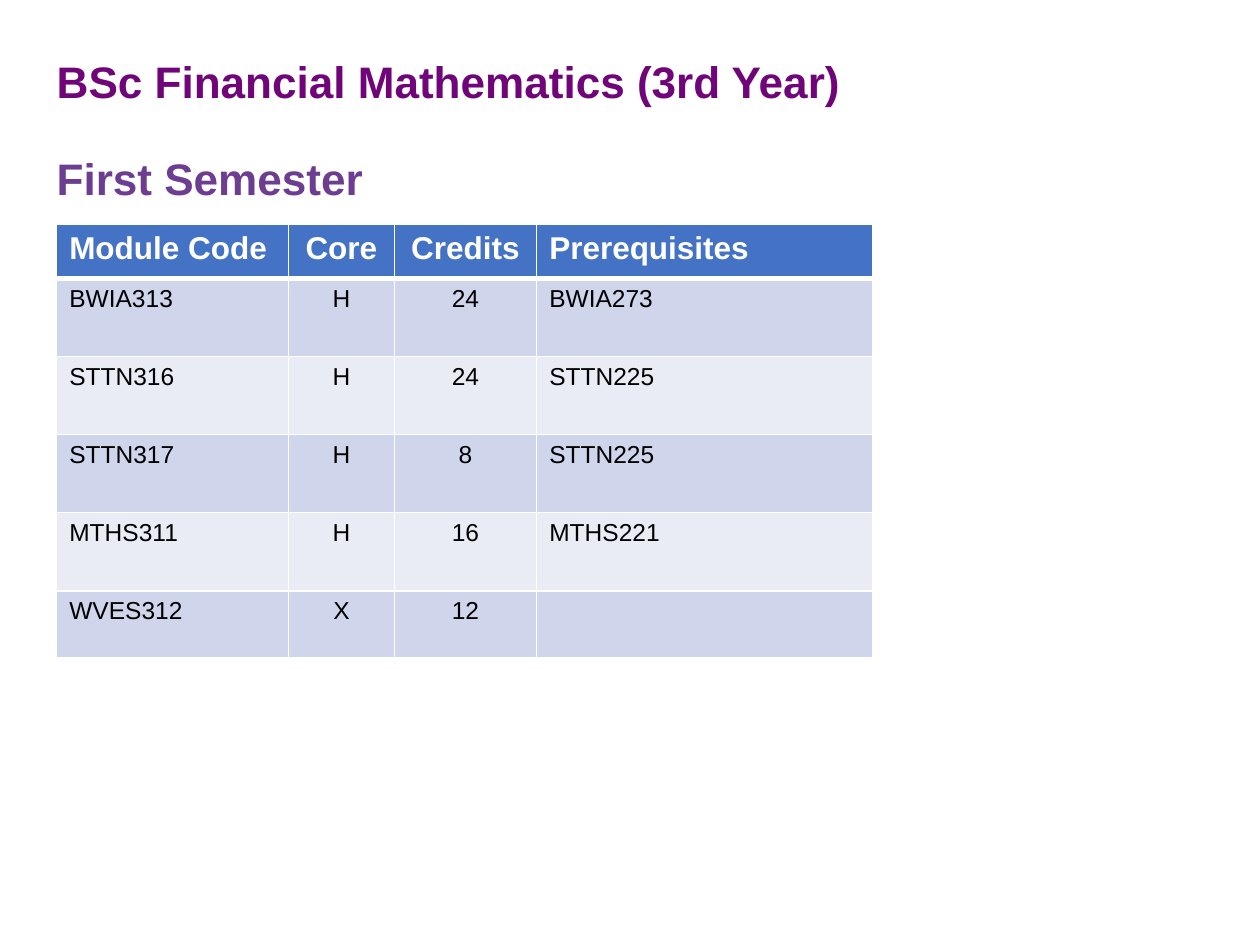
from pptx import Presentation
from pptx.dml.color import RGBColor
from pptx.enum.text import PP_ALIGN as Align
from pptx.oxml import parse_xml
from pptx.oxml.ns import nsdecls
from pptx.util import Inches, Pt

PURPLE = RGBColor(0x6F, 0x05, 0x79)
VIOLET = RGBColor(0x6C, 0x3D, 0x91)
BLUE = RGBColor(0x44, 0x72, 0xC4)
BAND_DARK = RGBColor(0xCF, 0xD5, 0xEA)
BAND_LIGHT = RGBColor(0xE9, 0xEB, 0xF5)
WHITE = RGBColor(0xFF, 0xFF, 0xFF)
BLACK = RGBColor(0x00, 0x00, 0x00)

HEADINGS = [("BSc Financial Mathematics (3rd Year)", PURPLE), ("First Semester", VIOLET)]
MODULES = [
    ("Module Code", "Core", "Credits", "Prerequisites"),
    ("BWIA313", "H", "24", "BWIA273"),
    ("STTN316", "H", "24", "STTN225"),
    ("STTN317", "H", "8", "STTN225"),
    ("MTHS311", "H", "16", "MTHS221"),
    ("WVES312", "X", "12", ""),
]
COLUMN_WIDTHS = [1.84, 0.84, 1.13, 2.67]
ROW_HEIGHTS = [0.43] + [0.62] * 4 + [0.53]
CENTERED_COLUMNS = (1, 2)


class SlideBuilder:
    font_name = "Arial"
    heading_size = 25.2
    header_size = 18
    body_size = 14

    def __init__(self, slide):
        self.slide = slide

    def style(self, paragraph, size, color, bold):
        font = paragraph.font
        font.name = self.font_name
        font.size = Pt(size)
        font.bold = bold
        font.color.rgb = color

    def headings(self, lines, left, top, width, height):
        box = self.slide.shapes.add_textbox(
            Inches(left), Inches(top), Inches(width), Inches(height))
        frame = box.text_frame
        frame.word_wrap = True
        frame.margin_left = frame.margin_top = Inches(0.08)
        for index, (text, color) in enumerate(lines):
            paragraph = frame.add_paragraph() if index else frame.paragraphs[0]
            paragraph.text = text
            paragraph.line_spacing = 0.9
            if index:
                paragraph.space_before = Pt(28)
            self.style(paragraph, self.heading_size, color, True)

    def borders(self, cell, top, bottom):
        properties = cell._tc.get_or_add_tcPr()
        widths = {"lnL": 1, "lnR": 1, "lnT": top, "lnB": bottom}
        for position, (side, width) in enumerate(widths.items()):
            properties.insert(position, parse_xml(
                f'<a:{side} {nsdecls("a")} w="{Pt(width)}"><a:solidFill>'
                f'<a:srgbClr val="{WHITE}"/></a:solidFill></a:{side}>'))

    def table(self, rows, widths, heights, left, top):
        table = self.slide.shapes.add_table(
            len(rows), len(widths), Inches(left), Inches(top),
            Inches(sum(widths)), Inches(sum(heights))).table
        for column, width in zip(table.columns, widths):
            column.width = Inches(width)
        for r, (values, height) in enumerate(zip(rows, heights)):
            table.rows[r].height = Inches(height)
            header = r == 0
            fill = BLUE if header else BAND_DARK if r % 2 else BAND_LIGHT
            for c, value in enumerate(values):
                cell = table.cell(r, c)
                cell.text = value
                cell.fill.solid()
                cell.fill.fore_color.rgb = fill
                self.borders(cell, 3 if r == 1 else 1, 3 if header else 1)
                paragraph = cell.text_frame.paragraphs[0]
                paragraph.alignment = Align.CENTER if c in CENTERED_COLUMNS else Align.LEFT
                self.style(paragraph, self.header_size if header else self.body_size,
                           WHITE if header else BLACK, header)


def main():
    deck = Presentation()
    deck.slide_width, deck.slide_height = Inches(10), Inches(7.5)
    builder = SlideBuilder(deck.slides.add_slide(deck.slide_layouts[6]))
    builder.headings(HEADINGS, 0.37, 0.4, 9.25, 1.25)
    builder.table(MODULES, COLUMN_WIDTHS, ROW_HEIGHTS, 0.45, 1.78)
    deck.save("out.pptx")


if __name__ == "__main__":
    main()
